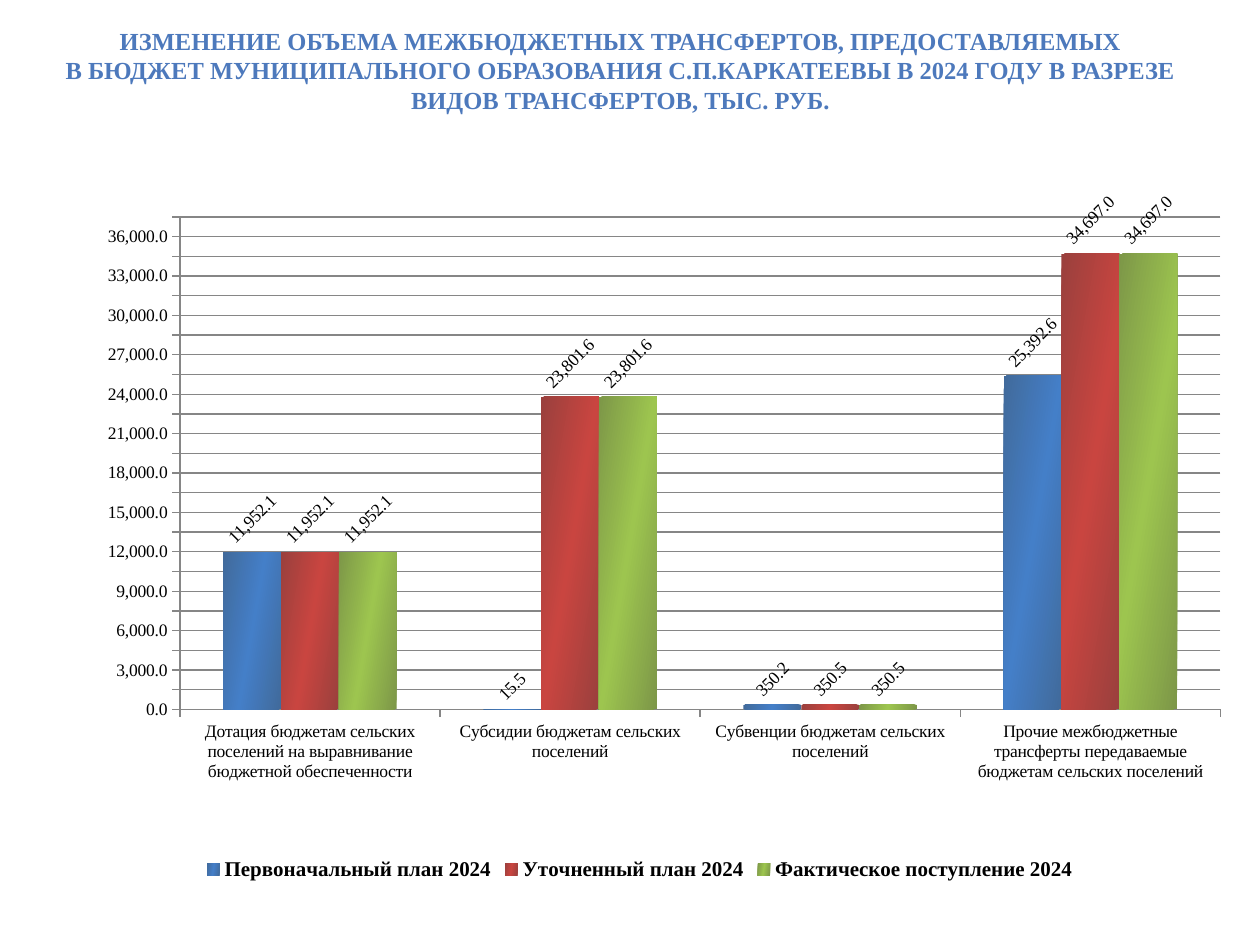
import copy

import pptx
import pptx.chart.data
import pptx.dml.color
import pptx.enum.chart
import pptx.enum.text
import pptx.oxml
import pptx.oxml.ns
import pptx.util

Pt = pptx.util.Pt
RGB = pptx.dml.color.RGBColor.from_string
XL = pptx.enum.chart

THEME = {
    "font": "Times New Roman",
    "title": "4D79BC", "text": "000000", "line": "868686",
    "title_size": 14, "chart_size": 10, "legend_size": 12,
    # edge and middle colour of each series' gradient
    "bars": [("416A9B", "447FC8"), ("9A403D", "C94540"), ("7D9748", "9DC54F")],
}
NUMBER_FORMAT = "#,##0.0"

CATEGORIES = [
    "Дотация бюджетам сельских поселений на выравнивание бюджетной обеспеченности",
    "Субсидии бюджетам сельских поселений",
    "Субвенции бюджетам сельских поселений",
    "Прочие межбюджетные трансферты передаваемые бюджетам сельских поселений",
]
SERIES = {
    "Первоначальный план 2024": (11952.1, 15.5, 350.2, 25392.6),
    "Уточненный план 2024": (11952.1, 23801.6, 350.5, 34697),
    "Фактическое поступление 2024": (11952.1, 23801.6, 350.5, 34697),
}


def set_font(font, size, color, bold=False):
    font.name = THEME["font"]
    font.size = Pt(size)
    font.bold = bold
    font.color.rgb = RGB(color)


prs = pptx.Presentation()
prs.slide_width, prs.slide_height = Pt(720), Pt(540)
slide = prs.slides.add_slide(prs.slide_layouts[5])

# Title
title = slide.shapes.title
title.left, title.top, title.width, title.height = Pt(8.6), Pt(9.4), Pt(692), Pt(61)
tf = title.text_frame
tf.word_wrap = True
tf.vertical_anchor = pptx.enum.text.MSO_ANCHOR.MIDDLE
tf.margin_left = tf.margin_right = Pt(8)
tf.margin_top = tf.margin_bottom = Pt(4)
p = tf.paragraphs[0]
p.text = (
    "ИЗМЕНЕНИЕ ОБЪЕМА МЕЖБЮДЖЕТНЫХ ТРАНСФЕРТОВ, ПРЕДОСТАВЛЯЕМЫХ\n"
    "В БЮДЖЕТ МУНИЦИПАЛЬНОГО ОБРАЗОВАНИЯ С.П.КАРКАТЕЕВЫ В 2024 ГОДУ "
    "В РАЗРЕЗЕ ВИДОВ ТРАНСФЕРТОВ, ТЫС. РУБ."
)
p.alignment = pptx.enum.text.PP_ALIGN.CENTER
set_font(p.font, THEME["title_size"], THEME["title"], bold=True)

# Chart
data = pptx.chart.data.CategoryChartData(number_format=NUMBER_FORMAT)
data.categories = CATEGORIES
for name, values in SERIES.items():
    data.add_series(name, values)
chart = slide.shapes.add_chart(
    XL.XL_CHART_TYPE.COLUMN_CLUSTERED, Pt(33.8), Pt(44.6), Pt(664), Pt(461.5), data
).chart
chart.has_title = False
set_font(chart.font, THEME["chart_size"], THEME["text"])

chart.has_legend = True
chart.legend.position = XL.XL_LEGEND_POSITION.BOTTOM
chart.legend.include_in_layout = False
set_font(chart.legend.font, THEME["legend_size"], THEME["text"], bold=True)

# Axes
value_axis = chart.value_axis
value_axis.minimum_scale, value_axis.maximum_scale = 0, 37500
value_axis.major_unit = 1500
value_axis.has_major_gridlines = True
value_axis.tick_labels.number_format = NUMBER_FORMAT
value_axis.tick_labels.number_format_is_linked = False
for axis in (chart.category_axis, value_axis):
    axis.major_tick_mark = XL.XL_TICK_MARK.OUTSIDE
    set_font(axis.tick_labels.font, THEME["chart_size"], THEME["text"])
for part in (chart.category_axis, value_axis, value_axis.major_gridlines):
    part.format.line.color.rgb = RGB(THEME["line"])
    part.format.line.width = Pt(0.75)

# Columns with a dark-bright-dark gradient and slanted value labels
plot = chart.plots[0]
plot.gap_width, plot.overlap = 150, 0
plot.vary_by_categories = False
for series, (edge, middle) in zip(plot.series, THEME["bars"]):
    series.invert_if_negative = False
    fill = series.format.fill
    fill.gradient()
    fill.gradient_angle = 350
    for stop, color in zip(fill.gradient_stops, (edge, middle)):
        stop.color.rgb = RGB(color)
    series.format.line.fill.background()
    labels = series.data_labels
    labels.show_value = True
    labels.number_format = NUMBER_FORMAT
    labels.number_format_is_linked = False
    labels.position = XL.XL_LABEL_POSITION.OUTSIDE_END
    set_font(labels.font, THEME["chart_size"], THEME["text"])

for stops in chart.element.xpath(".//c:ser/c:spPr//a:gsLst"):
    stops.append(copy.deepcopy(stops[0]))
    for stop, position in zip(stops, (0, 50000, 100000)):
        stop.set("pos", str(position))
for body in chart.element.xpath(".//c:dLbls/c:txPr/a:bodyPr"):
    body.set("rot", "-2700000")
    body.set("vert", "horz")

# Inner plot area, as fractions of the chart
plot_area = chart.element.xpath(".//c:plotArea")[0]
for old in plot_area.xpath("c:layout"):
    plot_area.remove(old)
plot_area.insert(0, pptx.oxml.parse_xml(
    f'<c:layout {pptx.oxml.ns.nsdecls("c")}><c:manualLayout>'
    '<c:layoutTarget val="inner"/><c:xMode val="edge"/><c:yMode val="edge"/>'
    '<c:x val="0.104"/><c:y val="0.172"/><c:w val="0.896"/><c:h val="0.61"/>'
    "</c:manualLayout></c:layout>"
))

prs.save("out.pptx")
